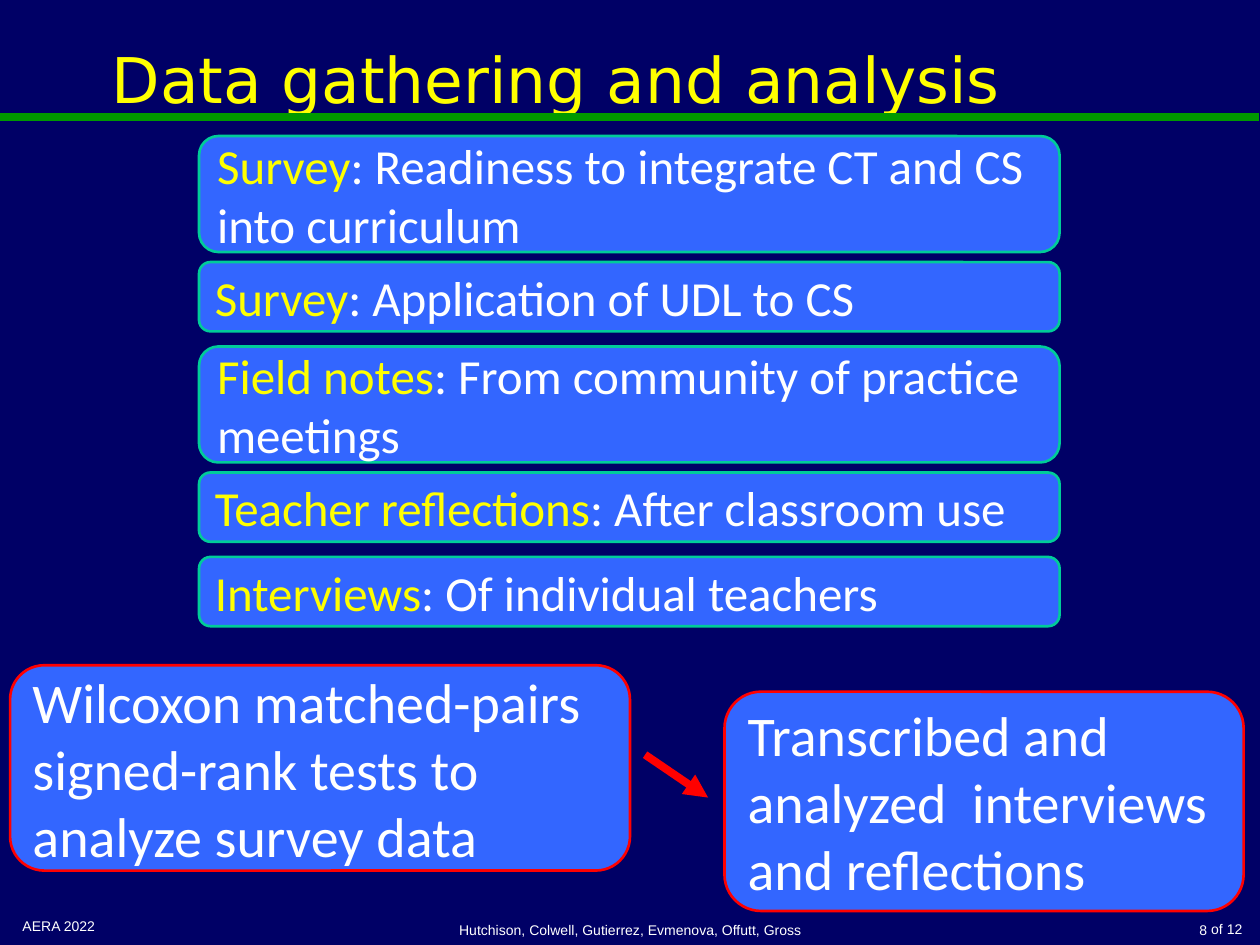
from dataclasses import dataclass

from lxml import etree
from pptx import Presentation
from pptx.dml.color import RGBColor
from pptx.enum.shapes import MSO_CONNECTOR, MSO_SHAPE
from pptx.enum.text import MSO_ANCHOR, MSO_AUTO_SIZE, PP_ALIGN
from pptx.oxml.ns import qn
from pptx.util import Inches, Pt

STRAIGHT = MSO_CONNECTOR.STRAIGHT
ROUNDED = MSO_SHAPE.ROUNDED_RECTANGLE
TOP, MIDDLE, BOTTOM = MSO_ANCHOR.TOP, MSO_ANCHOR.MIDDLE, MSO_ANCHOR.BOTTOM
LEFT, CENTER, RIGHT = PP_ALIGN.LEFT, PP_ALIGN.CENTER, PP_ALIGN.RIGHT
TITLE_ONLY = 5


@dataclass(frozen=True)
class Theme:
    background: str = "000066"
    rule: str = "009900"
    heading: str = "FFFF00"
    text: str = "FFFFFF"
    box: str = "3366FF"
    source_border: str = "00CC99"
    analysis: str = "FF0000"
    title_font: str = "DejaVu Sans"
    body_font: str = "Calibri"
    footer_font: str = "Arial"
    title_size: int = 36
    source_size: int = 28
    analysis_size: int = 32
    footer_size: int = 8
    border_width: float = 1.5
    line_width: float = 4.5


THEME = Theme()

# Label, description, number of text lines
SOURCES = [
    ("Survey", ": Readiness to integrate CT and CS into curriculum", 2),
    ("Survey", ": Application of UDL to CS", 1),
    ("Field notes", ": From community of practice meetings", 2),
    ("Teacher reflections", ": After classroom use", 1),
    ("Interviews", ": Of individual teachers", 1),
]
# Box height and distance to the next box, by number of text lines
SOURCE_HEIGHT = {1: 0.55, 2: 0.92}
SOURCE_PITCH = {1: 0.67, 2: 1.0}

ANALYSES = [
    ("Wilcoxon matched-pairs signed-rank tests to analyze survey data",
     (0.08, 5.28, 4.92, 1.63)),
    ("Transcribed and analyzed  interviews and reflections",
     (5.75, 5.49, 4.12, 1.74)),
]

FOOTERS = [
    ("AERA 2022", (0.08, 7.23, 2.33, 0.26), LEFT, TOP),
    ("Hutchison, Colwell, Gutierrez, Evmenova, Offutt, Gross",
     (3.42, 7.23, 3.17, 0.27), CENTER, BOTTOM),
    ("8", (7.87, 7.23, 1.81, 0.27), RIGHT, BOTTOM),
    ("of 12", (9.5, 7.26, 0.46, 0.24), RIGHT, TOP),
]


def rgb(color):
    return RGBColor.from_string(color)


def write(sp, parts, font, size, align=LEFT, anchor=MIDDLE):
    """Fill a shape with one paragraph made of (text, color) parts."""
    tf = sp.text_frame
    tf.word_wrap = True
    tf.auto_size = MSO_AUTO_SIZE.NONE
    tf.vertical_anchor = anchor
    p = tf.paragraphs[0]
    p.alignment = align
    for text, color in parts:
        r = p.add_run()
        r.text = text
        r.font.name = font
        r.font.size = Pt(size)
        r.font.color.rgb = rgb(color)


def add_title(slide, text):
    sp = slide.shapes.title
    sp.left, sp.top, sp.width, sp.height = map(Inches, (0.08, 0, 8.67, 1.25))
    write(sp, [(text, THEME.heading)], THEME.title_font, THEME.title_size, CENTER)


def add_box(slide, place, parts, size, border):
    sp = slide.shapes.add_shape(ROUNDED, *map(Inches, place))
    sp.shadow.inherit = False
    sp.fill.solid()
    sp.fill.fore_color.rgb = rgb(THEME.box)
    sp.line.color.rgb = rgb(border)
    sp.line.width = Pt(THEME.border_width)
    write(sp, parts, THEME.body_font, size)


def add_footer(slide, text, place, align, anchor):
    sp = slide.shapes.add_textbox(*map(Inches, place))
    write(sp, [(text, THEME.text)], THEME.footer_font, THEME.footer_size, align, anchor)


def add_line(slide, ends, color, arrow=False):
    line = slide.shapes.add_connector(STRAIGHT, *map(Inches, ends))
    line.line.color.rgb = rgb(color)
    line.line.width = Pt(THEME.line_width)
    if arrow:
        ln = line.line._get_or_add_ln()
        etree.SubElement(ln, qn("a:tailEnd"), type="triangle")
    etree.SubElement(line._element.spPr, qn("a:effectLst"))


def add_sources(slide):
    top = 1.08
    for label, description, lines in SOURCES:
        parts = [(label, THEME.heading), (description, THEME.text)]
        add_box(slide, (1.58, top, 6.83, SOURCE_HEIGHT[lines]), parts,
                THEME.source_size, THEME.source_border)
        top += SOURCE_PITCH[lines]


def add_analyses(slide):
    for text, place in ANALYSES:
        add_box(slide, place, [(text, THEME.text)], THEME.analysis_size, THEME.analysis)
    add_line(slide, (5.12, 5.99, 5.62, 6.33), THEME.analysis, arrow=True)


def main():
    prs = Presentation()
    prs.slide_width, prs.slide_height = Inches(10), Inches(7.5)
    slide = prs.slides.add_slide(prs.slide_layouts[TITLE_ONLY])
    slide.background.fill.solid()
    slide.background.fill.fore_color.rgb = rgb(THEME.background)

    add_title(slide, "Data gathering and analysis")
    add_line(slide, (0, 0.93, 9.99, 0.93), THEME.rule)
    for footer in FOOTERS:
        add_footer(slide, *footer)
    add_sources(slide)
    add_analyses(slide)
    prs.save("out.pptx")


if __name__ == "__main__":
    main()
